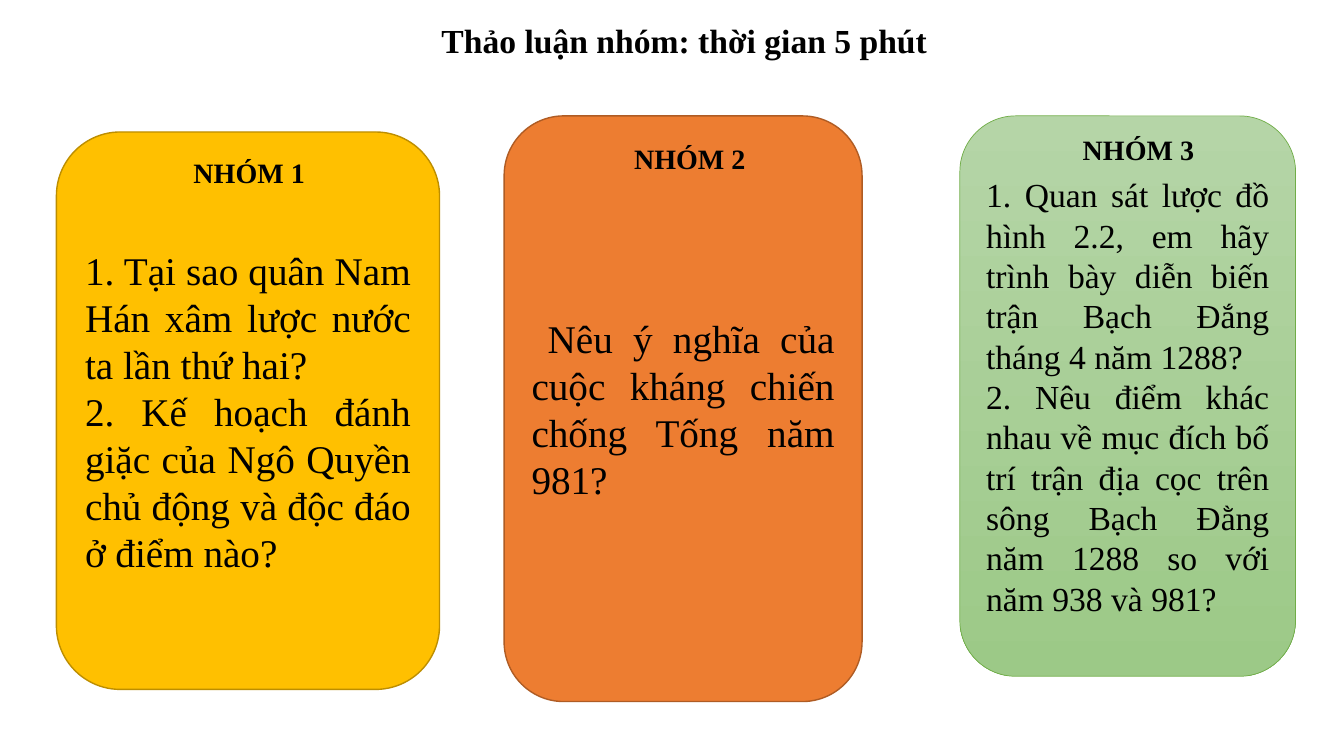
from pptx import Presentation
from pptx.dml.color import RGBColor
from pptx.enum.shapes import MSO_SHAPE
from pptx.enum.text import MSO_ANCHOR, PP_ALIGN
from pptx.util import Inches, Pt

ROUND = MSO_SHAPE.ROUNDED_RECTANGLE
MIDDLE = MSO_ANCHOR.MIDDLE
JUSTIFY = PP_ALIGN.JUSTIFY
FONT = "Times New Roman"
COLORS = {
    "text": "000000",
    "gold": "FFC000", "gold edge": "BD8E00",
    "orange": "ED7D31", "orange edge": "AF5C24",
    "green top": "B5D5A7", "green base": "9CC987", "green edge": "70AD47",
}

# Card box, label offset, fills, edge, edge width, text size, first indent, questions
GROUPS = [
    ((0.56, 1.31, 3.8, 5.53), (1.26, 0.18), ["gold"], "gold edge", 1, 28, 0,
     ["1. Tại sao quân Nam Hán xâm lược nước ta lần thứ hai?",
      "2. Kế hoạch đánh giặc của Ngô Quyền chủ động và độc đáo ở điểm nào?"]),
    ((5, 1.15, 3.55, 5.81), (1.19, 0.2), ["orange"], "orange edge", 1, 28, 0.16,
     ["Nêu ý nghĩa của cuộc kháng chiến chống Tống năm 981?"]),
    ((9.52, 1.15, 3.33, 5.56), (1.12, 0.12), ["green top", "green base"],
     "green edge", 0.5, 24, 0,
     ["1. Quan sát lược đồ hình 2.2, em hãy trình bày diễn biến trận Bạch Đắng "
      "tháng 4 năm 1288?",
      "2. Nêu điểm khác nhau về mục đích bố trí trận địa cọc trên sông Bạch Đằng "
      "năm 1288 so với năm 938 và 981?"]),
]


def color(name):
    return RGBColor.from_string(COLORS[name])


def style(para, size, bold=False):
    para.font.name = FONT
    para.font.size = Pt(size)
    para.font.bold = bold
    para.font.color.rgb = color("text")


def add_label(slide, box, text, size):
    frame = slide.shapes.add_textbox(*map(Inches, box)).text_frame
    frame.word_wrap = True
    frame.text = text
    style(frame.paragraphs[0], size, bold=True)


def paint(fill, names):
    if len(names) == 1:
        fill.solid()
        fill.fore_color.rgb = color(names[0])
        return
    fill.gradient()
    fill.gradient_angle = 270
    for stop, name in zip(fill.gradient_stops, names):
        stop.color.rgb = color(name)


def add_card(slide, box, fills, edge, width, size, indent, lines):
    card = slide.shapes.add_shape(ROUND, *map(Inches, box))
    card.shadow.inherit = False
    paint(card.fill, fills)
    card.line.color.rgb = color(edge)
    card.line.width = Pt(width)

    frame = card.text_frame
    frame.word_wrap = True
    frame.vertical_anchor = MIDDLE
    frame.text = "\n".join(lines)
    for para in frame.paragraphs:
        para.alignment = JUSTIFY
        if indent:
            para._p.get_or_add_pPr().set("indent", str(Inches(indent)))
        style(para, size)


def add_group(slide, number, box, shift, *look):
    add_card(slide, box, *look)
    spot = (box[0] + shift[0], box[1] + shift[1], 2.21, 0.44)
    add_label(slide, spot, f"NHÓM {number}", 20)


def main():
    deck = Presentation()
    deck.slide_width = Inches(13.33)
    deck.slide_height = Inches(7.5)
    slide = deck.slides.add_slide(deck.slide_layouts[6])

    # Group cards
    for number, group in enumerate(GROUPS, 1):
        add_group(slide, number, *group)

    # Title
    add_label(slide, (4.28, 0.15, 6.81, 0.5),
              "Thảo luận nhóm: thời gian 5 phút", 24)

    deck.save("out.pptx")


if __name__ == "__main__":
    main()
